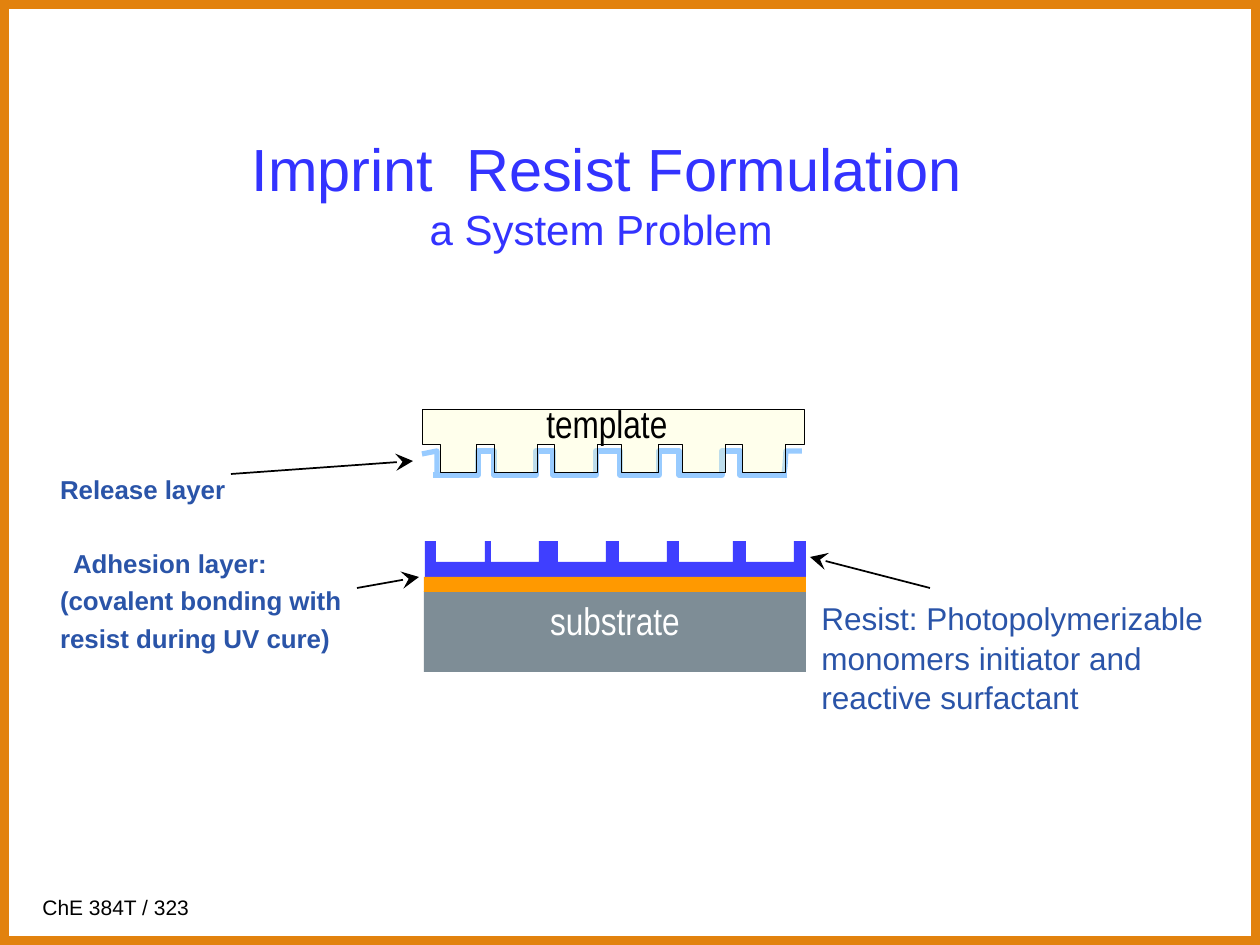
from lxml import etree
from pptx import Presentation
from pptx.dml.color import RGBColor as RGB
from pptx.enum.shapes import MSO_CONNECTOR as CONN, MSO_SHAPE as SHAPE
from pptx.enum.text import MSO_ANCHOR as ANCHOR, PP_ALIGN as ALIGN
from pptx.oxml.ns import qn
from pptx.util import Pt

PX = 914400 / 126
THEME = {
    "frame": RGB.from_string("E2820E"),
    "ink": RGB.from_string("000000"),
    "release": RGB.from_string("98CBFF"),
    "resist": RGB.from_string("3F3FFF"),
    "adhesion": RGB.from_string("FF9900"),
    "substrate": RGB.from_string("7E8D96"),
    "template": RGB.from_string("FFFFCC"),
    "title": {"name": "Arial", "size": Pt(34), "color": "3333FF"},
    "subtitle": {"name": "Arial", "size": Pt(24), "color": "3333FF"},
    "label": {"name": "Arial", "size": Pt(14.8), "color": "2A54A8", "bold": True},
    "note": {"name": "Arial", "size": Pt(18), "color": "2A54A8"},
    "footer": {"name": "Arial", "size": Pt(12), "color": "000000"},
    "part": {"name": "Arial Narrow", "size": Pt(22), "color": "000000"},
    "part_light": {"name": "Arial Narrow", "size": Pt(22), "color": "FFFFFF"},
}


def comb(teeth, base, tip):
    return [pt for a, b in teeth for pt in ((a, base), (a, tip), (b, tip), (b, base))]


def write(tf, lines):
    for i, (text, style, fmt) in enumerate(lines):
        p = tf.paragraphs[0] if i == 0 else tf.add_paragraph()
        for key, value in fmt.items():
            setattr(p, key, value)
        r = p.add_run()
        r.text = text
        for key, value in THEME[style].items():
            if key == "color":
                r.font.color.rgb = RGB.from_string(value)
            else:
                setattr(r.font, key, value)


prs = Presentation()
prs.slide_width, prs.slide_height = round(1260 * PX), round(945 * PX)
s = prs.slides.add_slide(prs.slide_layouts[6])

release_teeth = [(433, 478), (494, 536), (553, 596), (620, 659), (679, 722), (740, 787)]
resist_teeth = [(425, 436), (485, 491), (539, 558), (606, 619), (667, 679), (733, 746), (794, 806)]
template_teeth = [(440, 476), (494, 537), (554, 597), (621, 658), (682, 725), (742, 785)]

outlines = [
    (comb(release_teeth, 451, 475)[1:-1], False, None, "release", 3),
    ([(437, 476), (437, 451), (422, 454)], False, None, "release", 3),
    ([(784, 474), (785, 466), (786, 451), (802, 451)], False, None, "release", 3),
    ([(425, 597)] + comb(resist_teeth, 562, 541) + [(806, 597)], True, "resist", None, 0),
    ([(422, 410), (422, 445)] + comb(template_teeth, 445, 473) + [(804, 445), (804, 410)],
     True, "template", "ink", 0.5),
]
rects = [
    ((0, 0, 1260, 945), None, "frame", 10),
    ((424, 591, 382, 81), "substrate", None, 0),
    ((424, 577, 382, 15), "adhesion", None, 0),
]

shapes = []
for points, closed, fill, line, width in outlines:
    fb = s.shapes.build_freeform(*points[0], scale=PX)
    fb.add_line_segments(points[1:], close=closed)
    shapes.append((fb.convert_to_shape(), fill, line, width))
for box, fill, line, width in rects:
    sp = s.shapes.add_shape(SHAPE.RECTANGLE, *(round(v * PX) for v in box))
    shapes.append((sp, fill, line, width))

for sp, fill, line, width in shapes:
    sp.shadow.inherit = False
    if fill:
        sp.fill.solid()
        sp.fill.fore_color.rgb = THEME[fill]
    else:
        sp.fill.background()
    if line:
        sp.line.color.rgb = THEME[line]
        sp.line.width = Pt(width)
    else:
        sp.line.fill.background()
    if fill == "template":
        color = sp.fill._xPr.find(qn("a:solidFill"))[0]
        etree.SubElement(color, qn("a:alpha"), val="36000")
    if fill == "substrate":
        sp.text_frame.vertical_anchor = ANCHOR.TOP
        write(sp.text_frame, [("substrate", "part_light", {"alignment": ALIGN.CENTER})])

arrows = [(231, 474, 413, 461), (357, 588, 419, 577), (930, 588, 810, 557)]
for ends in arrows:
    c = s.shapes.add_connector(CONN.STRAIGHT, *(round(v * PX) for v in ends))
    c.line.color.rgb = THEME["ink"]
    c.line.width = Pt(1)
    etree.SubElement(c.line._get_or_add_ln(), qn("a:tailEnd"), type="stealth", w="lg", len="lg")
    etree.SubElement(c._element.spPr, qn("a:effectLst"))

center = {"alignment": ALIGN.CENTER}
gap = {"space_before": Pt(3.5)}
texts = [
    ((30, 888, 360, 38), {}, [("ChE 384T / 323", "footer", {})]),
    ((204, 151, 806, 84), {"vertical_anchor": ANCHOR.MIDDLE},
     [("Imprint  Resist Formulation", "title", center), ("a System Problem ", "subtitle", center)]),
    ((0, 431, 510, 221), {"margin_left": round(60 * PX), "margin_top": round(43 * PX)},
     [("Release layer", "label", {}),
      ("Adhesion layer:", "label", {"space_before": Pt(24.5)}),
      ("(covalent bonding with", "label", gap),
      ("resist during UV cure)", "label", gap)]),
    ((534, 394, 147, 59), {"word_wrap": False}, [("template", "part", {})]),
    ((809, 591, 436, 127), {},
     [("Resist: Photopolymerizable monomers initiator and reactive surfactant",
       "note", {"line_spacing": 1.05})]),
]
for box, frame, lines in texts:
    tf = s.shapes.add_textbox(*(round(v * PX) for v in box)).text_frame
    for key, value in {"word_wrap": True, **frame}.items():
        setattr(tf, key, value)
    write(tf, lines)
    for p in tf.paragraphs:
        if p.text == "Adhesion layer:":
            p._p.get_or_add_pPr().set("marL", str(round(13 * PX)))

prs.save("out.pptx")
